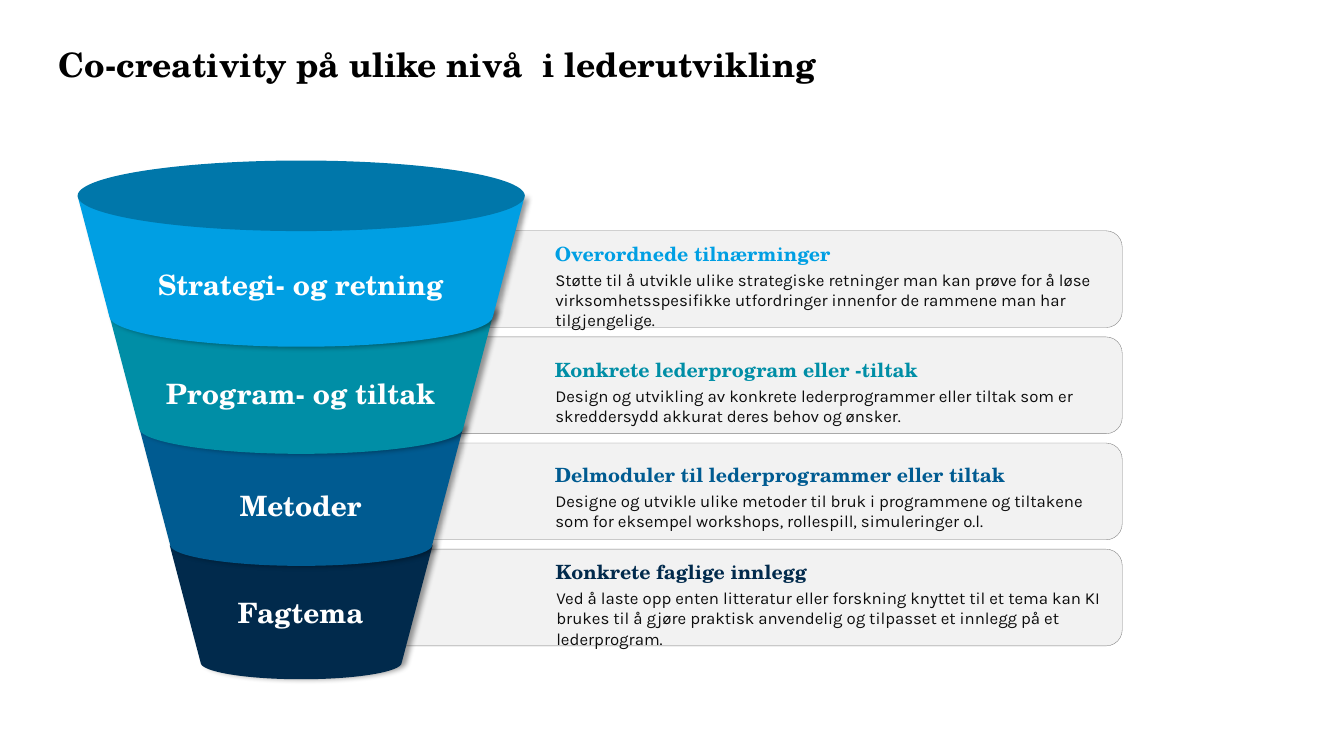
from lxml.etree import SubElement
from pptx import Presentation
from pptx.dml.color import RGBColor
from pptx.enum.shapes import MSO_SHAPE
from pptx.enum.text import MSO_ANCHOR, MSO_AUTO_SIZE, PP_ALIGN
from pptx.oxml.ns import qn
from pptx.util import Pt

COLORS = {
    "strategy": "009FE3", "program": "008EA6", "methods": "005B91", "topics": "012A4C",
    "rim": "0077AA", "card": "F2F2F2", "border": "808080",
    "title": "000000", "body": "0D0D0D", "label": "FFFFFF", "shadow": "000000",
}
SERIF, SANS = "TeX Gyre Schola", "Karla"

# Funnel level: colour, label, label width, label offset, heading, text, heading offsets x and y
LEVELS = [
    ("strategy", "Strategi- og retning", 253.4, 46, "Overordnede tilnærminger",
     "Støtte til å utvikle ulike strategiske retninger man kan prøve for å løse "
     "virksomhetsspesifikke utfordringer innenfor de rammene man har tilgjengelige.", 111.8, 4.3),
    ("program", "Program- og tiltak", 233.3, 43.5, "Konkrete lederprogram eller -tiltak",
     "Design og utvikling av konkrete lederprogrammer eller tiltak som er "
     "skreddersydd akkurat deres behov og ønsker.", 111.8, 11.4),
    ("methods", "Metoder", 125.3, 40.3, "Delmoduler til lederprogrammer eller tiltak",
     "Designe og utvikle ulike metoder til bruk i programmene og tiltakene "
     "som for eksempel workshops, rollespill, simuleringer o.l.", 111.8, 10.8),
    ("topics", "Fagtema", 125.3, 32.4, "Konkrete faglige innlegg",
     "Ved å laste opp enten litteratur eller forskning knyttet til et tema kan KI "
     "brukes til å gjøre praktisk anvendelig og tilpasset et innlegg på et lederprogram.",
     112.5, 4.3),
]
# Funnel band: top, half width at the top, depth of the curved bottom
BANDS = [(141.8, 159.2, 22), (221.8, 137.9, 18.5), (305.3, 115.7, 15), (389.5, 93.9, 11.8)]
BAND_SIDE, BAND_TAPER = 83.9, 22.1
ROUND = 0.55  # handle length of a quarter ellipse


def color(key):
    return RGBColor.from_string(COLORS[key])


def style(paragraph, font, size, key, bold=False):
    for run in paragraph.runs:
        run.font.name, run.font.size, run.font.bold = font, Pt(size), bold
        run.font.color.rgb = color(key)


def paint(shape, key):
    shape.shadow.inherit = False
    shape.fill.solid()
    shape.fill.fore_color.rgb = color(key)
    shape.line.fill.background()


def add_text(slide, box, text, font, size, key, bold=False, align=PP_ALIGN.LEFT):
    frame = slide.shapes.add_textbox(*map(Pt, box)).text_frame
    frame.word_wrap = True
    frame.auto_size = MSO_AUTO_SIZE.SHAPE_TO_FIT_TEXT
    frame.text = text
    frame.paragraphs[0].alignment = align
    style(frame.paragraphs[0], font, size, key, bold)


def add_title(slide, box, text):
    title = slide.shapes.title
    title.left, title.top, title.width, title.height = map(Pt, box)
    frame = title.text_frame
    frame.margin_left = frame.margin_top = frame.margin_right = frame.margin_bottom = 0
    frame.vertical_anchor = MSO_ANCHOR.TOP
    frame.text = text
    heading = frame.paragraphs[0]
    heading.alignment, heading.line_spacing = PP_ALIGN.LEFT, 0.9
    style(heading, SERIF, 24, "title", True)


def add_card(slide, box):
    card = slide.shapes.add_shape(MSO_SHAPE.ROUNDED_RECTANGLE, *map(Pt, box))
    paint(card, "card")
    card.line.color.rgb = color("border")
    card.line.width = Pt(0.25)


def add_card_text(slide, box, level):
    key, _, _, _, heading, text, indent, offset = level
    left, top = box[0] + indent, box[1] + offset
    add_text(slide, (left + 0.4, top + 19.8, 413, 36), text, SANS, 12, "body")
    add_text(slide, (left, top, 357, 24.2), heading, SERIF, 14, key, True)


def bend(lines):
    """Turn three line segments into one Bezier curve through their points."""
    curve = lines[0].makeelement(qn("a:cubicBezTo"), {})
    lines[0].addprevious(curve)
    for line in lines:
        curve.append(line[0])
        line.getparent().remove(line)


def add_band(slide, center, band, key):
    top, half, depth = band
    shoulder, radius = top + BAND_SIDE, half - BAND_TAPER
    bottom, handle = shoulder + depth, radius * ROUND
    points = [
        (center - radius, shoulder),
        (center - radius, shoulder + depth * ROUND), (center - handle, bottom), (center, bottom),
        (center + handle, bottom), (center + radius, shoulder + depth * ROUND),
        (center + radius, shoulder), (center + half, top),
    ]
    outline = slide.shapes.build_freeform(Pt(center - half), Pt(top))
    outline.add_line_segments([(Pt(x), Pt(y)) for x, y in points])
    segment = outline.convert_to_shape()
    paint(segment, key)
    # Curved bottom
    lines = list(segment._element.iter(qn("a:lnTo")))
    bend(lines[1:4])
    bend(lines[4:7])
    # Soft shadow to the right
    effects = segment._element.spPr.find(qn("a:effectLst"))
    shadow = SubElement(effects, qn("a:outerShdw"), blurRad=str(Pt(4)), dist=str(Pt(3)),
                        dir="0", algn="l", rotWithShape="0")
    tint = SubElement(shadow, qn("a:srgbClr"), val=COLORS["shadow"])
    SubElement(tint, qn("a:alpha"), val="40000")


def add_funnel(slide, box):
    left, top, width, rim_height = box
    center = left + width / 2
    # Lower bands lie behind the upper ones
    for band, level in reversed(list(zip(BANDS, LEVELS))):
        add_band(slide, center, band, level[0])
    rim = slide.shapes.add_shape(MSO_SHAPE.OVAL, *map(Pt, (left, top, width, rim_height)))
    paint(rim, "rim")


def add_funnel_labels(slide, center):
    for band, (_, label, width, offset, *_) in zip(BANDS, LEVELS):
        label_box = (center - width / 2, band[0] + offset, width, 31.5)
        add_text(slide, label_box, label, SERIF, 20, "label", True, PP_ALIGN.CENTER)


def main():
    prs = Presentation()
    prs.slide_width, prs.slide_height = Pt(960), Pt(540)
    slide = prs.slides.add_slide(prs.slide_layouts[5])
    add_title(slide, (41.8, 34.6, 762.5, 55.4), "Co-creativity på ulike nivå  i lederutvikling")
    cards = [(277.4, 164.9 + 75.8 * row, 524.2, 69.1) for row in range(len(LEVELS))]
    for card in cards:
        add_card(slide, card)
    add_funnel(slide, (55.4, 114.7, 319.5, 50.4))
    for card, level in zip(cards, LEVELS):
        add_card_text(slide, card, level)
    add_funnel_labels(slide, 214.8)
    prs.save("out.pptx")


if __name__ == "__main__":
    main()
